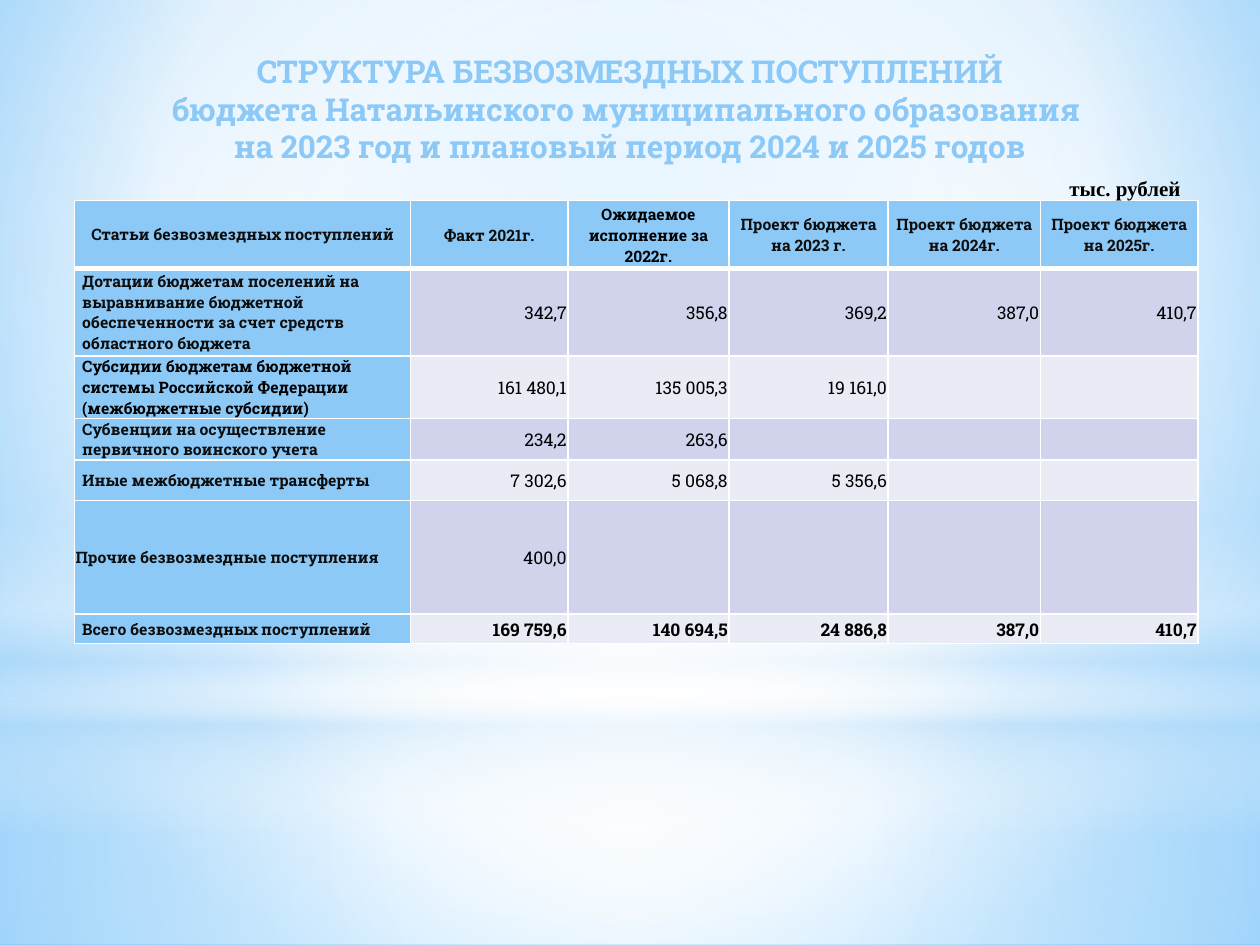
from copy import deepcopy

from lxml.etree import SubElement
from pptx import Presentation
from pptx.dml.color import RGBColor
from pptx.enum.shapes import MSO_SHAPE
from pptx.enum.text import MSO_ANCHOR, MSO_AUTO_SIZE, PP_ALIGN
from pptx.oxml.ns import qn
from pptx.util import Pt

COLORS = {
    "accent": "8CC9F7",
    "white": "FFFFFF",
    "haze": "B4DCFA",
    "sky": "9ED5FF",
    "deep": "5BB9FF",
    "dark": "0D0D0D",
    "black": "000000",
    "band_odd": "D0D3EB",
    "band_even": "E9EBF5",
}
SLAB = "Roboto Slab"
TITLE = [
    "СТРУКТУРА БЕЗВОЗМЕЗДНЫХ ПОСТУПЛЕНИЙ",
    "бюджета Натальинского муниципального образования ",
    "на 2023 год и плановый период 2024 и 2025 годов",
]
HEADER = [
    "Статьи безвозмездных поступлений",
    "Факт 2021г.",
    "Ожидаемое исполнение за 2022г.",
    "Проект бюджета на 2023 г.",
    "Проект бюджета на 2024г.",
    "Проект бюджета на 2025г.",
]
ROWS = [
    ["Дотации бюджетам поселений на выравнивание бюджетной обеспеченности "
     "за счет средств областного бюджета",
     "342,7", "356,8", "369,2", "387,0", "410,7"],
    ["Субсидии бюджетам бюджетной системы Российской Федерации (межбюджетные субсидии)",
     "161 480,1", "135 005,3", "19 161,0", "", ""],
    ["Субвенции на осуществление первичного воинского учета",
     "234,2", "263,6", "", "", ""],
    ["Иные межбюджетные трансферты", "7 302,6", "5 068,8", "5 356,6", "", ""],
    ["Прочие безвозмездные поступления", "400,0", "", "", "", ""],
    ["Всего безвозмездных поступлений",
     "169 759,6", "140 694,5", "24 886,8", "387,0", "410,7"],
]
COL_WIDTHS = [192, 90, 92, 91, 87, 90]
ROW_HEIGHTS = [39, 50, 33, 22, 23, 65, 17]
BLACK_LABEL_ROW = 2
UNINDENTED_ROW = 5

# Gradient stops: position %, colour, opacity %
CENTER = (50, 50, 50, 50)
BACKGROUND = [(0, "sky", 100), (60, "white", 100), (100, "deep", 100)]
GLOWS = [
    (MSO_SHAPE.RECTANGLE, (0, 402, 720, 138), CENTER,
     [(0, "white", 91), (37, "white", 76), (100, "haze", 79)]),
    (MSO_SHAPE.RECTANGLE, (0, 0, 720, 402), CENTER,
     [(0, "white", 89), (48, "white", 62), (100, "haze", 79)]),
    (MSO_SHAPE.RECTANGLE, (0, 297, 720, 180), None,
     [(0, "white", 0), (29, "white", 30), (45, "haze", 40),
      (55, "white", 26), (65, "haze", 60), (100, "white", 0)]),
    (MSO_SHAPE.OVAL, (0, 126, 720, 402), CENTER,
     [(0, "white", 100), (56, "white", 0)]),
]


def rgb(name):
    return RGBColor.from_string(COLORS[name])


def set_gradient(fill, element, stops, focus):
    """Fill with a circular gradient around focus, or a vertical one without it."""
    fill.background()
    grad = element.xpath(".//a:noFill")[0]
    grad.tag = qn("a:gradFill")
    gs_list = SubElement(grad, qn("a:gsLst"))
    for pos, color, opacity in stops:
        gs = SubElement(gs_list, qn("a:gs"), pos=str(pos * 1000))
        clr = SubElement(gs, qn("a:srgbClr"), val=COLORS[color])
        if opacity < 100:
            SubElement(clr, qn("a:alpha"), val=str(opacity * 1000))
    if focus:
        circle = SubElement(grad, qn("a:path"), {"path": "circle"})
        SubElement(circle, qn("a:fillToRect"),
                   {side: str(v * 1000) for side, v in zip("ltrb", focus)})
    else:
        SubElement(grad, qn("a:lin"), ang="5400000", scaled="0")


def add_glow(s, kind, box, focus, stops):
    sp = s.shapes.add_shape(kind, *map(Pt, box))
    sp.shadow.inherit = False
    sp.line.fill.background()
    set_gradient(sp.fill, sp._element.spPr, stops, focus)


def add_run(p, text, size, color, font=SLAB, bold=True):
    r = p.add_run()
    r.text = text
    for name, value in {"size": Pt(size), "name": font, "bold": bold}.items():
        setattr(r.font, name, value)
    r.font.color.rgb = rgb(color)
    return r


def format_title(s):
    title = s.shapes.title
    box = {"left": 36, "top": 26, "width": 648, "height": 82}
    for name, value in box.items():
        setattr(title, name, Pt(value))
    tf = title.text_frame
    tf.auto_size = MSO_AUTO_SIZE.NONE
    tf.vertical_anchor = MSO_ANCHOR.TOP
    p = tf.paragraphs[0]
    p.alignment = PP_ALIGN.CENTER
    for i, line in enumerate(TITLE):
        if i:
            p.add_line_break()
        r = add_run(p, line, 18, "accent")
    for br in p._p.findall(qn("a:br")):
        br.append(deepcopy(r._r.rPr))
    s.shapes._spTree.append(title._element)


def set_borders(cell, bottom):
    tc_pr = cell._tc.get_or_add_tcPr()
    for i, side in enumerate("LRTB"):
        width = bottom if side == "B" else 1
        ln = SubElement(tc_pr, qn(f"a:ln{side}"), w=str(Pt(width)))
        SubElement(SubElement(ln, qn("a:solidFill")), qn("a:srgbClr"), val=COLORS["white"])
        tc_pr.insert(i, ln)


def format_cell(cell, row, col, text):
    header, label = row == 0, col == 0
    indented = label and row != UNINDENTED_ROW
    side = 4.5 if indented else 0.75
    margins = {"left": side, "right": side, "top": 0 if indented else 0.75, "bottom": 0}
    for name, value in margins.items():
        setattr(cell, f"margin_{name}", Pt(value))
    cell.vertical_anchor = MSO_ANCHOR.MIDDLE
    cell.fill.solid()
    band = "band_odd" if row % 2 else "band_even"
    cell.fill.fore_color.rgb = rgb("accent" if header or label else band)
    set_borders(cell, 3 if header else 1)

    p = cell.text_frame.paragraphs[0]
    if header:
        p.alignment = PP_ALIGN.CENTER
    else:
        p.alignment = PP_ALIGN.LEFT if label else PP_ALIGN.RIGHT
    if not text:
        return
    if header or label:
        black = (header and col == 2) or row == BLACK_LABEL_ROW
        add_run(p, text, 9, "black" if black else "dark")
    else:
        add_run(p, text, 10, "black", bold=row == len(ROWS))


def add_receipts_table(s):
    data = [HEADER] + ROWS
    table = s.shapes.add_table(len(data), len(HEADER), Pt(42.5), Pt(114.5),
                               Pt(sum(COL_WIDTHS)), Pt(sum(ROW_HEIGHTS))).table
    for column, width in zip(table.columns, COL_WIDTHS):
        column.width = Pt(width)
    for row, height in zip(table.rows, ROW_HEIGHTS):
        row.height = Pt(height)
    for i, texts in enumerate(data):
        for j, text in enumerate(texts):
            format_cell(table.cell(i, j), i, j, text)


def add_unit_label(s):
    tf = s.shapes.add_textbox(Pt(604), Pt(97), Pt(91), Pt(22)).text_frame
    tf.word_wrap = True
    add_run(tf.paragraphs[0], "тыс. рублей", 12, "black", "Times New Roman")


def main():
    prs = Presentation()
    prs.slide_width, prs.slide_height = Pt(720), Pt(540)
    s = prs.slides.add_slide(prs.slide_layouts[5])
    set_gradient(s.background.fill, s._element, BACKGROUND, (20, 10, 20, 60))
    for glow in GLOWS:
        add_glow(s, *glow)
    format_title(s)
    add_receipts_table(s)
    add_unit_label(s)
    prs.save("out.pptx")


if __name__ == "__main__":
    main()
